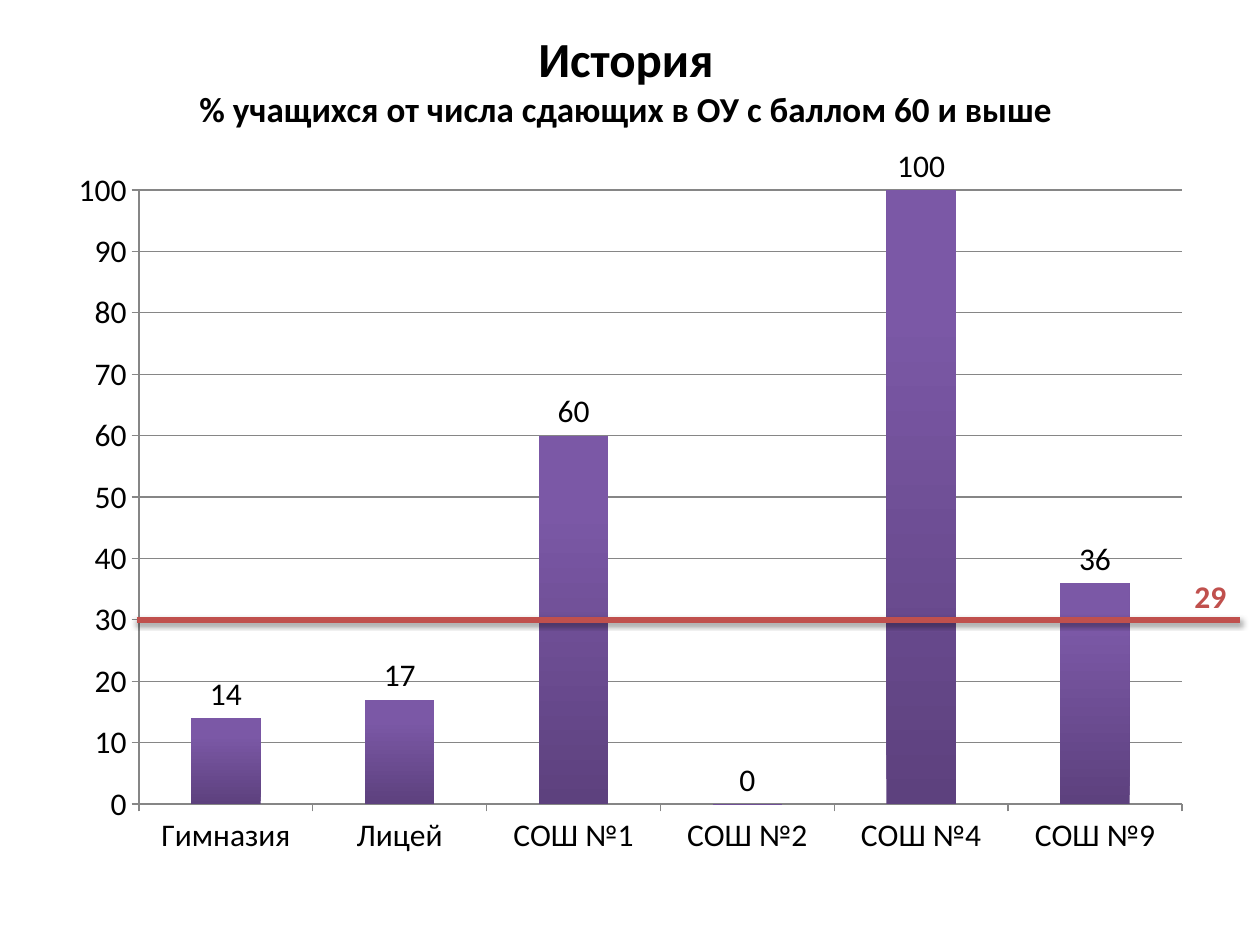
from lxml import etree
from pptx import Presentation
from pptx import util as u
from pptx.chart.data import CategoryChartData
from pptx.dml.color import RGBColor
from pptx.enum import chart as charts, shapes, text
from pptx.oxml import parse_xml
from pptx.oxml.ns import nsdecls, qn

TITLE = [("История", 28), ("% учащихся от числа сдающих в ОУ с баллом 60 и выше", 20)]
SCHOOLS = {"Гимназия": 14, "Лицей": 17, "СОШ №1": 60,
           "СОШ №2": 0, "СОШ №4": 100, "СОШ №9": 36}
AVERAGE = "29"
COLORS = {"text": "000000", "accent": "C0504D", "grid": "868686",
          "bar_bottom": "5D417E", "bar_top": "7B58A6"}
FONT = "Calibri"
TITLE_BOX = (59, 0, 1134, 158)
CHART_BOX = (59, 147, 1142, 748)
PLOT_BOX = (139, 189, 1043, 615)
AVERAGE_LINE = (137, 620, 1240, 620)
AVERAGE_BOX = (1182, 571, 88, 50)


def px(*lengths):
    return [u.Emu(round(length * 914400 / 126)) for length in lengths]


def color(name):
    return RGBColor.from_string(COLORS[name])


def style(font, name, size, bold=False):
    for key, value in {"name": FONT, "size": u.Pt(size), "bold": bold}.items():
        setattr(font, key, value)
    font.color.rgb = color(name)


def add_text(page, box_px, lines, name, align, anchor):
    frame = page.shapes.add_textbox(*px(*box_px)).text_frame
    frame.word_wrap = True
    frame.vertical_anchor = anchor
    para = frame.paragraphs[0]
    para.alignment = align
    for index, (words, size) in enumerate(lines):
        if index:
            para.add_line_break()
        span = para.add_run()
        span.text = words
        style(span.font, name, size, True)


def place_plot(chart):
    left, top, width, height = CHART_BOX
    x, y, w, h = PLOT_BOX
    area = chart._chartSpace.chart.plotArea
    for old in area.findall(qn("c:layout")):
        area.remove(old)
    layout = etree.Element(qn("c:layout"))
    manual = etree.SubElement(layout, qn("c:manualLayout"))
    values = {"layoutTarget": "inner", "xMode": "edge", "yMode": "edge",
              "x": (x - left) / width, "y": (y - top) / height,
              "w": w / width, "h": h / height}
    for tag, value in values.items():
        etree.SubElement(manual, qn(f"c:{tag}")).set("val", str(value))
    area.insert(0, layout)


def add_school_chart(page):
    data = CategoryChartData()
    data.categories = list(SCHOOLS)
    data.add_series("Series 1", list(SCHOOLS.values()))
    chart = page.shapes.add_chart(
        charts.XL_CHART_TYPE.COLUMN_CLUSTERED, *px(*CHART_BOX), data).chart
    chart.has_legend = chart.has_title = False
    style(chart.font, "text", 18)
    place_plot(chart)

    values = chart.value_axis
    for key, value in {"minimum_scale": 0, "maximum_scale": 100, "major_unit": 10,
                       "has_major_gridlines": True}.items():
        setattr(values, key, value)
    for axis in (values, chart.category_axis):
        axis.major_tick_mark = charts.XL_TICK_MARK.OUTSIDE
    for item in (values, chart.category_axis, values.major_gridlines):
        item.format.line.color.rgb = color("grid")
        item.format.line.width = u.Pt(0.75)

    plot = chart.plots[0]
    plot.gap_width = 150
    plot.vary_by_categories = False
    plot.has_data_labels = True
    plot.data_labels.show_value = True
    plot.data_labels.position = charts.XL_LABEL_POSITION.OUTSIDE_END
    fill = plot.series[0].format.fill
    fill.gradient()
    fill.gradient_angle = 90
    for stop, place, name in zip(fill.gradient_stops, (0, 0.8), ("bar_bottom", "bar_top")):
        stop.position = place
        stop.color.rgb = color(name)


def add_average_line(page):
    line = page.shapes.add_connector(shapes.MSO_CONNECTOR.STRAIGHT, *px(*AVERAGE_LINE))
    line.line.color.rgb = color("accent")
    line.line.width = u.Pt(3)
    line.element.spPr.append(parse_xml(
        f'<a:effectLst {nsdecls("a")}>'
        '<a:outerShdw blurRad="40000" dist="20000" dir="5400000" rotWithShape="0">'
        '<a:srgbClr val="000000"><a:alpha val="38000"/></a:srgbClr>'
        '</a:outerShdw></a:effectLst>'))


def main():
    deck = Presentation()
    deck.slide_width, deck.slide_height = px(1260, 945)
    page = deck.slides.add_slide(deck.slide_layouts[6])
    add_text(page, TITLE_BOX, TITLE, "text", text.PP_ALIGN.CENTER, text.MSO_ANCHOR.MIDDLE)
    add_school_chart(page)
    add_average_line(page)
    add_text(page, AVERAGE_BOX, [(AVERAGE, 18)], "accent",
             text.PP_ALIGN.LEFT, text.MSO_ANCHOR.TOP)
    deck.save("out.pptx")


if __name__ == "__main__":
    main()
